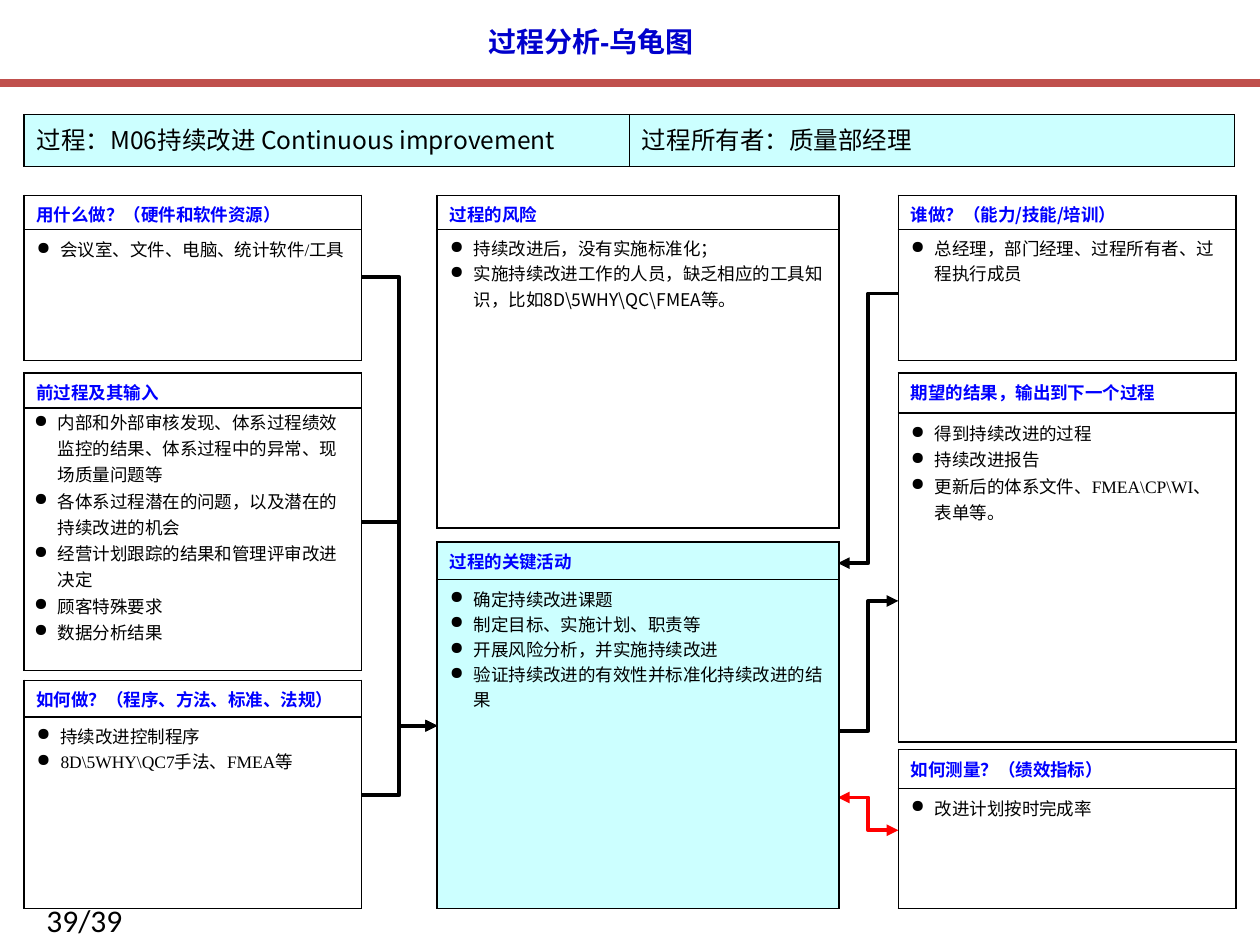
from lxml import etree
from pptx import Presentation
from pptx.dml.color import RGBColor as Color
from pptx.enum.shapes import MSO_CONNECTOR as Conn
from pptx.enum.text import MSO_ANCHOR as Anchor, PP_ALIGN as Align
from pptx.oxml.ns import qn
from pptx.util import Inches, Pt

BLACK = Color(0, 0, 0)
BLUE = Color(0, 0, 0xFF)
NAVY = Color(0, 0, 0xCC)
RED = Color(0xFF, 0, 0)
BRICK = Color(0xC0, 0x50, 0x4D)
CYAN = Color(0xCC, 0xFF, 0xFF)
SANS = "Noto Sans CJK SC"
SERIF = "Times New Roman"

LEFT, MID, RIGHT = 0.19, 3.47, 7.13
SIDE, CORE = 2.68, 3.19


class Board:
    def __init__(self, slide):
        self.shapes = slide.shapes

    def style(self, para, size, name, color, bold=False):
        font = para.font
        font.size, font.name, font.bold = Pt(size), name, bold
        font.color.rgb = color

    def text(self, words, box, size, name, color, bold=False, align=Align.LEFT,
             anchor=Anchor.TOP, wrap=True):
        frame = self.shapes.add_textbox(*map(Inches, box)).text_frame
        frame.word_wrap = wrap
        frame.vertical_anchor = anchor
        para = frame.paragraphs[0]
        para.text, para.alignment = words, align
        self.style(para, size, name, color, bold)

    def line(self, start, end, color=BLACK, width=2.25, kind=Conn.ELBOW, head=False, tail=False):
        link = self.shapes.add_connector(kind, *map(Inches, start + end))
        link.line.color.rgb, link.line.width = color, Pt(width)
        props = link._element.spPr
        for tag, shown in (("a:headEnd", head), ("a:tailEnd", tail)):
            if shown:
                etree.SubElement(props.find(qn("a:ln")), qn(tag), type="triangle")
        etree.SubElement(props, qn("a:effectLst"))

    def grid(self, left, top, cols, rows):
        """Add a plain table without banding."""
        width, height = Inches(sum(cols)), Inches(sum(rows))
        table = self.shapes.add_table(len(rows), len(cols), Inches(left), Inches(top),
                                      width, height).table
        table.first_row = table.horz_banding = False
        for col, size in zip(table.columns, cols):
            col.width = Inches(size)
        for row, size in zip(table.rows, rows):
            row.height = Inches(size)
        return table

    def cell(self, cell, lines, size, name, color, bold=False, fill=None):
        props = cell._tc.get_or_add_tcPr()
        for side in "LRTB":
            edge = etree.SubElement(props, qn(f"a:ln{side}"), w=str(Pt(1)))
            paint = etree.SubElement(edge, qn("a:solidFill"))
            etree.SubElement(paint, qn("a:srgbClr"), val=str(BLACK))
        if fill is None:
            cell.fill.background()
        else:
            cell.fill.solid()
            cell.fill.fore_color.rgb = fill
        cell.text = "\n".join(lines)
        for para in cell.text_frame.paragraphs:
            self.style(para, size, name, color, bold)

    def bullet(self, para, space):
        if space:
            para.line_spacing = Pt(space)
        props = para._p.get_or_add_pPr()
        props.set("marL", str(Inches(0.19)))
        props.set("indent", str(-Inches(0.19)))
        mark = etree.Element(qn("a:buChar"), char="●")
        props.find(qn("a:defRPr")).addprevious(mark)

    def panel(self, left, top, width, rows, title, items, name=SERIF, space=None,
              fill=None, tight=False):
        """Add a titled box with a bullet list."""
        table = self.grid(left, top, [width], rows)
        self.cell(table.cell(0, 0), [title], 10, SANS, BLUE, True, fill)
        body = table.cell(1, 0)
        self.cell(body, items, 10, name, BLACK, False, fill)
        if tight:
            body.margin_left = body.margin_right = Inches(0.08)
            body.margin_top = body.margin_bottom = 0
        for para in body.text_frame.paragraphs:
            self.bullet(para, space)

    def banner(self, left, top, width, height, labels):
        table = self.grid(left, top, [width / len(labels)] * len(labels), [height])
        for num, label in enumerate(labels):
            self.cell(table.cell(0, num), [label], 14, SANS, BLACK, fill=CYAN)


def main():
    deck = Presentation()
    deck.slide_width, deck.slide_height = Inches(10), Inches(7.5)
    board = Board(deck.slides.add_slide(deck.slide_layouts[6]))

    board.line((0, 0.66), (10, 0.66), BRICK, 4.5, Conn.STRAIGHT)
    board.text("过程分析-乌龟图", (2.09, 0.13, 5.2, 0.39), 16, "Arial", NAVY, True,
               Align.CENTER, Anchor.MIDDLE, False)

    for y in (6.31, 4.14, 2.2):
        board.line((2.87, y), (MID, 5.76), tail=True)
    board.line((6.65, 5.8), (RIGHT, 4.77), tail=True)
    board.line((6.65, 6.33), (RIGHT, 6.59), RED, head=True, tail=True)
    board.line((6.65, 4.47), (RIGHT, 2.33), head=True)

    board.banner(LEFT, 0.91, 9.61, 0.41,
                 ["过程：M06持续改进 Continuous improvement", "过程所有者：质量部经理"])

    board.panel(LEFT, 1.55, SIDE, [0.27, 1.04], "用什么做？（硬件和软件资源）",
                ["会议室、文件、电脑、统计软件/工具"], space=15)
    board.panel(RIGHT, 1.55, SIDE, [0.27, 1.04], "谁做？（能力/技能/培训）",
                ["总经理，部门经理、过程所有者、过程执行成员"])
    board.panel(LEFT, 2.96, SIDE, [0.28, 2.08], "前过程及其输入", [
        "内部和外部审核发现、体系过程绩效监控的结果、体系过程中的异常、现场质量问题等",
        "各体系过程潜在的问题，以及潜在的持续改进的机会",
        "经营计划跟踪的结果和管理评审改进决定",
        "顾客特殊要求",
        "数据分析结果",
    ], space=15, tight=True)
    board.panel(RIGHT, 2.96, SIDE, [0.32, 2.61], "期望的结果，输出到下一个过程", [
        "得到持续改进的过程",
        "持续改进报告",
        "更新后的体系文件、FMEA\\CP\\WI、表单等。",
    ], space=15)
    board.panel(LEFT, 5.4, SIDE, [0.29, 1.52], "如何做？（程序、方法、标准、法规）",
                ["持续改进控制程序", "8D\\5WHY\\QC7手法、FMEA等"])
    board.panel(RIGHT, 5.95, SIDE, [0.31, 0.95], "如何测量？（绩效指标）",
                ["改进计划按时完成率"])
    board.panel(MID, 1.55, CORE, [0.27, 2.37], "过程的风险", [
        "持续改进后，没有实施标准化；",
        "实施持续改进工作的人员，缺乏相应的工具知识，比如8D\\5WHY\\QC\\FMEA等。",
    ], SANS)
    board.panel(MID, 4.3, CORE, [0.3, 2.61], "过程的关键活动", [
        "确定持续改进课题",
        "制定目标、实施计划、职责等",
        "开展风险分析，并实施持续改进",
        "验证持续改进的有效性并标准化持续改进的结果",
    ], SANS, fill=CYAN)

    board.text("39/39", (0.27, 7.1, 0.95, 0.4), 18, "Calibri", BLACK)
    deck.save("out.pptx")


if __name__ == "__main__":
    main()
